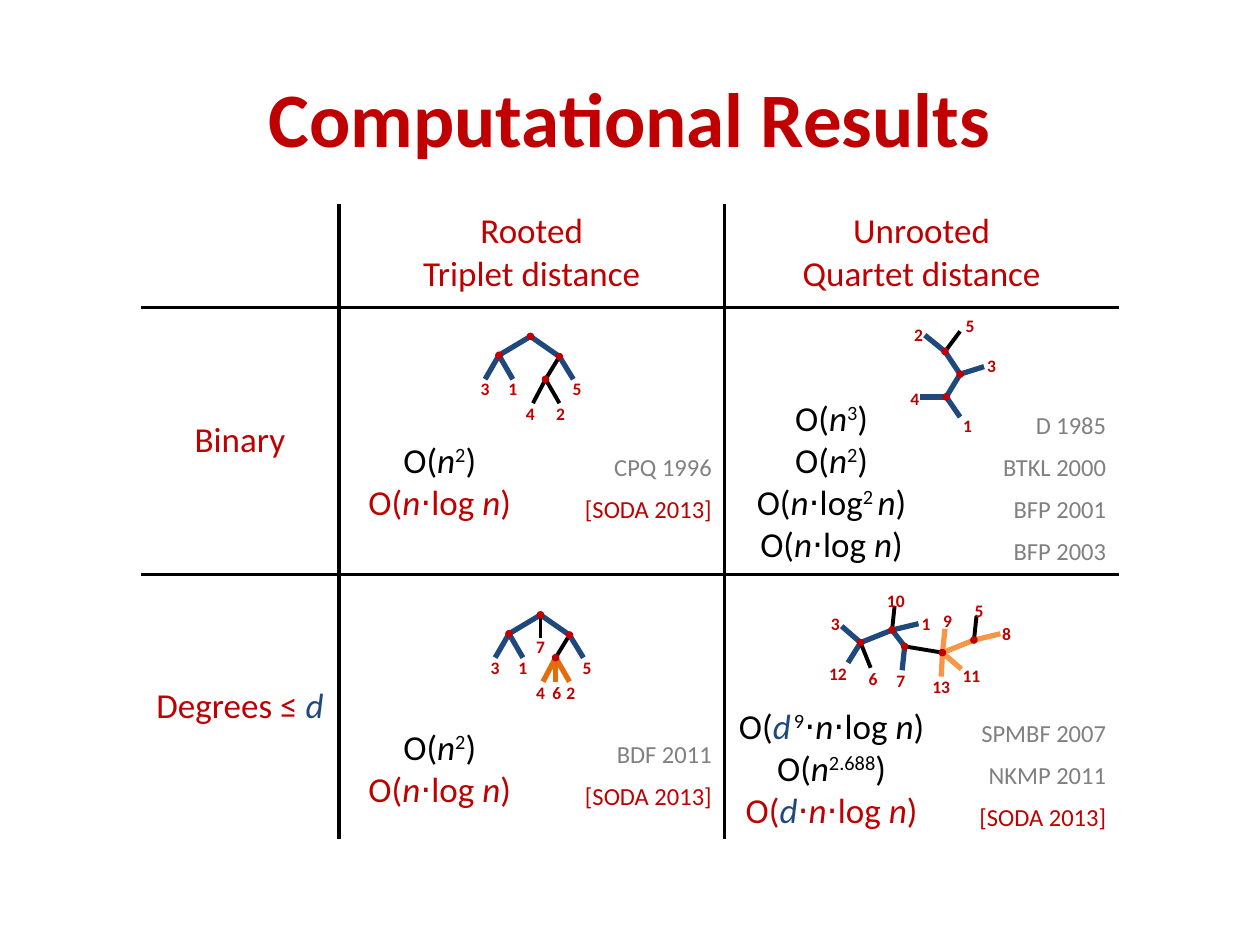
from lxml import etree
from pptx import Presentation
from pptx.dml.color import RGBColor
from pptx.enum.shapes import MSO_CONNECTOR as Connector, MSO_SHAPE as Shape
from pptx.enum.text import MSO_ANCHOR as Anchor, PP_ALIGN as Align
from pptx.oxml.ns import qn
from pptx.util import Inches, Pt

RED = RGBColor(0xC0, 0x00, 0x00)
BLUE = RGBColor(0x1F, 0x49, 0x7D)
BLACK = RGBColor(0x00, 0x00, 0x00)
GREY = RGBColor(0x80, 0x80, 0x80)
DARK_ORANGE = RGBColor(0xE4, 0x6C, 0x0A)
ORANGE = RGBColor(0xF7, 0x96, 0x46)

LINE_PITCH = 24
COLUMN_WIDTHS = [1.57, 1.6, 1.46, 1.7, 1.43]
ROW_HEIGHTS = [0.82, 2.12, 2.1]
RULED_COLUMN_EDGES = {1, 3}
RULED_ROW_EDGES = {1, 2}

# A run is (text, format values that differ from the paragraph's)
N = ("n", {"italic": True})
D = ("d", {"italic": True, "color": BLUE})
OPEN, CLOSE, DOT, LOG = [(text, {}) for text in ("O(", ")", "⋅", "⋅log ")]


def sup(text):
    return text, {"baseline": "30000"}


def recolor(color, *runs):
    return [(text, {"color": color, **values}) for text, values in runs]


N_SQUARED = [OPEN, N, sup("2"), CLOSE]
N_LOG_N = [OPEN, N, LOG, N, CLOSE]
OUR_BOUND = recolor(RED, *N_LOG_N)
OUR_PAPER = recolor(RED, ("[SODA 2013]", {}))


def papers(*names):
    return [[(name, {})] for name in names]


# (row, column): (number of lines kept free for the tree, paragraphs)
BOUNDS = {
    (1, 1): (2, [N_SQUARED, OUR_BOUND]),
    (1, 3): (2, [[OPEN, N, sup("3"), CLOSE], N_SQUARED,
                 [OPEN, N, ("⋅log", {}), sup("2 "), N, CLOSE], N_LOG_N]),
    (2, 1): (3, [N_SQUARED, OUR_BOUND]),
    (2, 3): (3, [[OPEN, D, (" ", {"italic": True, "size": 8}), sup("9"), DOT, N, LOG, N, CLOSE],
                 [OPEN, N, sup("2.688"), CLOSE],
                 recolor(RED, OPEN, D, DOT, N, LOG, N, CLOSE)]),
}
CITATIONS = {
    (1, 2): (2, papers("CPQ 1996") + [OUR_PAPER]),
    (1, 4): (2, papers("D 1985", "BTKL 2000", "BFP 2001", "BFP 2003")),
    (2, 2): (3, papers("BDF 2011") + [OUR_PAPER]),
    (2, 4): (3, papers("SPMBF 2007", "NKMP 2011") + [OUR_PAPER]),
}
HEADINGS = {
    (0, 1): papers("Rooted", "Triplet distance"),
    (0, 3): papers("Unrooted", "Quartet distance"),
    (1, 0): papers("Binary"),
    (2, 0): [[("Degrees ≤ ", {}), D]],
}

# Joints: name -> centre. Branches: (joint, joint, colour).
# Leaves: label -> (joint, colour, branch end, label centre).
ROOTED_JOINTS = {"root": (0.44, 0.07), "left": (0.19, 0.22), "right": (0.67, 0.23), "inner": (0.56, 0.41)}
ROOTED_BRANCHES = [("root", "left", BLUE), ("root", "right", BLUE), ("right", "inner", BLACK)]
ROOTED_LEAVES = {
    "3": ("left", BLUE, (0.08, 0.41), (0.08, 0.48)),
    "1": ("left", BLUE, (0.3, 0.41), (0.3, 0.48)),
    "5": ("right", BLUE, (0.78, 0.41), (0.81, 0.48)),
    "4": ("inner", BLACK, (0.46, 0.6), (0.44, 0.68)),
    "2": ("inner", BLACK, (0.67, 0.6), (0.68, 0.68)),
}
ROOTED_DEGREE_LEAVES = {
    **ROOTED_LEAVES,
    **{label: ("inner", DARK_ORANGE, *ROOTED_LEAVES[label][2:]) for label in "42"},
    "6": ("inner", DARK_ORANGE, (0.56, 0.6), (0.57, 0.68)),
    "7": ("root", BLACK, (0.44, 0.25), (0.44, 0.32)),
}
UNROOTED_JOINTS = {"top": (0.32, 0.35), "middle": (0.44, 0.53), "bottom": (0.33, 0.71)}
UNROOTED_BRANCHES = [("top", "middle", BLUE), ("middle", "bottom", BLUE)]
UNROOTED_LEAVES = {
    "1": ("bottom", BLUE, (0.44, 0.87), (0.5, 0.93)),
    "3": ("middle", BLUE, (0.63, 0.47), (0.69, 0.46)),
    "2": ("top", BLUE, (0.16, 0.22), (0.11, 0.21)),
    "5": ("top", BLACK, (0.44, 0.19), (0.52, 0.14)),
    "4": ("bottom", BLUE, (0.12, 0.71), (0.08, 0.72)),
}
CHAIN_JOINTS = {"a": (0.36, 0.48), "b": (0.61, 0.38), "c": (0.71, 0.51), "d": (1.01, 0.56), "e": (1.26, 0.46)}
CHAIN_BRANCHES = [("a", "b", BLUE), ("b", "c", BLUE), ("c", "d", BLACK), ("d", "e", ORANGE)]
CHAIN_LEAVES = {
    "12": ("a", BLUE, (0.26, 0.64), (0.18, 0.72)),
    "3": ("a", BLUE, (0.21, 0.35), (0.16, 0.32)),
    "6": ("a", BLACK, (0.44, 0.68), (0.46, 0.76)),
    "1": ("b", BLUE, (0.82, 0.33), (0.88, 0.32)),
    "10": ("b", BLACK, (0.63, 0.19), (0.64, 0.14)),
    "7": ("c", BLUE, (0.69, 0.7), (0.68, 0.78)),
    "13": ("d", ORANGE, (1, 0.75), (1, 0.82)),
    "11": ("d", ORANGE, (1.16, 0.69), (1.24, 0.74)),
    "9": ("d", ORANGE, (1.03, 0.37), (1.05, 0.3)),
    "8": ("e", ORANGE, (1.47, 0.41), (1.52, 0.4)),
    "5": ("e", BLACK, (1.28, 0.27), (1.3, 0.22)),
}


def write(frame, paragraphs, align, pitch=None, **base):
    """Fill a text frame with paragraphs of runs, each run overriding the base format."""
    for index, runs in enumerate(paragraphs):
        paragraph = frame.add_paragraph() if index else frame.paragraphs[0]
        paragraph.alignment = align
        if pitch:
            paragraph.line_spacing = Pt(pitch)
        for text, overrides in runs:
            values = {"name": "Calibri", "bold": False, "italic": False, **base, **overrides}
            run = paragraph.add_run()
            run.text = text
            run.font.color.rgb = values.pop("color")
            run.font.size = Pt(values.pop("size"))
            if "baseline" in values:
                run._r.get_or_add_rPr().set("baseline", values.pop("baseline"))
            for name, value in values.items():
                setattr(run.font, name, value)


def add_label(shapes, left, top, width, height, text, **values):
    box = shapes.add_textbox(Inches(left), Inches(top), Inches(width), Inches(height))
    frame = box.text_frame
    layout = {"word_wrap": True, "vertical_anchor": Anchor.MIDDLE, "margin_left": 0, "margin_right": 0}
    for name, value in layout.items():
        setattr(frame, name, value)
    write(frame, [[(text, {})]], Align.CENTER, bold=True, color=RED, **values)


def rule_cell(cell, row, column):
    """Draw the cell's borders only along the ruled edges of the grid."""
    ruled = {
        "a:lnL": column in RULED_COLUMN_EDGES,
        "a:lnR": column + cell.span_width in RULED_COLUMN_EDGES,
        "a:lnT": row in RULED_ROW_EDGES,
        "a:lnB": row + 1 in RULED_ROW_EDGES,
    }
    properties = cell._tc.get_or_add_tcPr()
    for position, (tag, visible) in enumerate(ruled.items()):
        border = etree.Element(qn(tag), w=str(Pt(2.25)))
        fill = etree.SubElement(border, qn("a:solidFill" if visible else "a:noFill"))
        if visible:
            etree.SubElement(fill, qn("a:srgbClr"), val=str(BLACK))
        properties.insert(position, border)


def add_results_table(slide, left, top):
    table = slide.shapes.add_table(
        len(ROW_HEIGHTS), len(COLUMN_WIDTHS), Inches(left), Inches(top),
        Inches(sum(COLUMN_WIDTHS)), Inches(sum(ROW_HEIGHTS))).table
    table.first_row = table.horz_banding = False
    for column, width in zip(table.columns, COLUMN_WIDTHS):
        column.width = Inches(width)
    for row, height in zip(table.rows, ROW_HEIGHTS):
        row.height = Inches(height)
    for first in (1, 3):
        table.cell(0, first).merge(table.cell(0, first + 1))
    for row in range(len(ROW_HEIGHTS)):
        for column in range(len(COLUMN_WIDTHS)):
            cell = table.cell(row, column)
            cell.fill.background()
            cell.vertical_anchor = Anchor.MIDDLE if row else Anchor.TOP
            rule_cell(cell, row, column)
    for place, paragraphs in HEADINGS.items():
        write(table.cell(*place).text_frame, paragraphs, Align.CENTER, size=20, color=RED)
    for entries, align, size, color in ((BOUNDS, Align.CENTER, 20, BLACK), (CITATIONS, Align.RIGHT, 14, GREY)):
        for place, (free_lines, paragraphs) in entries.items():
            cell = table.cell(*place)
            cell.margin_top = Inches(0.05) + Pt(free_lines * LINE_PITCH)
            write(cell.text_frame, paragraphs, align, LINE_PITCH, size=size, color=color)


def add_tree(slide, left, top, joints, branches, leaves):
    shapes = slide.shapes.add_group_shape().shapes
    edges = [(joints[start], joints[end], color) for start, end, color in branches]
    edges += [(joints[joint], tip, color) for joint, color, tip, _ in leaves.values()]
    for (x1, y1), (x2, y2), color in edges:
        branch = shapes.add_connector(Connector.STRAIGHT, Inches(left + x1), Inches(top + y1),
                                      Inches(left + x2), Inches(top + y2))
        branch.line.color.rgb = color
        branch.line.width = Pt(2.25 if color == BLACK else 3)
        etree.SubElement(branch._element.spPr, qn("a:effectLst"))
    for x, y in joints.values():
        joint = shapes.add_shape(Shape.OVAL, Inches(left + x - 0.03), Inches(top + y - 0.03),
                                 Inches(0.06), Inches(0.06))
        joint.shadow.inherit = False
        joint.fill.solid()
        joint.fill.fore_color.rgb = RED
        joint.line.fill.background()
    for text, (_, _, _, (x, y)) in leaves.items():
        width = 0.16 if len(text) == 1 else 0.4
        add_label(shapes, left + x - width / 2, top + y - 0.13, width, 0.27, text, size=10)


def main():
    deck = Presentation()
    deck.slide_width, deck.slide_height = Inches(10), Inches(7.5)
    slide = deck.slides.add_slide(deck.slide_layouts[6])
    add_results_table(slide, 1.12, 1.62)
    add_label(slide.shapes, 0.5, 0.3, 9, 1.25, "Computational Results", size=44)
    add_tree(slide, 3.77, 2.6, ROOTED_JOINTS, ROOTED_BRANCHES, ROOTED_LEAVES)
    add_tree(slide, 7.18, 2.44, UNROOTED_JOINTS, UNROOTED_BRANCHES, UNROOTED_LEAVES)
    add_tree(slide, 3.85, 4.81, ROOTED_JOINTS, ROOTED_BRANCHES, ROOTED_DEGREE_LEAVES)
    add_tree(slide, 6.47, 4.62, CHAIN_JOINTS, CHAIN_BRANCHES, CHAIN_LEAVES)
    deck.save("out.pptx")


if __name__ == "__main__":
    main()
